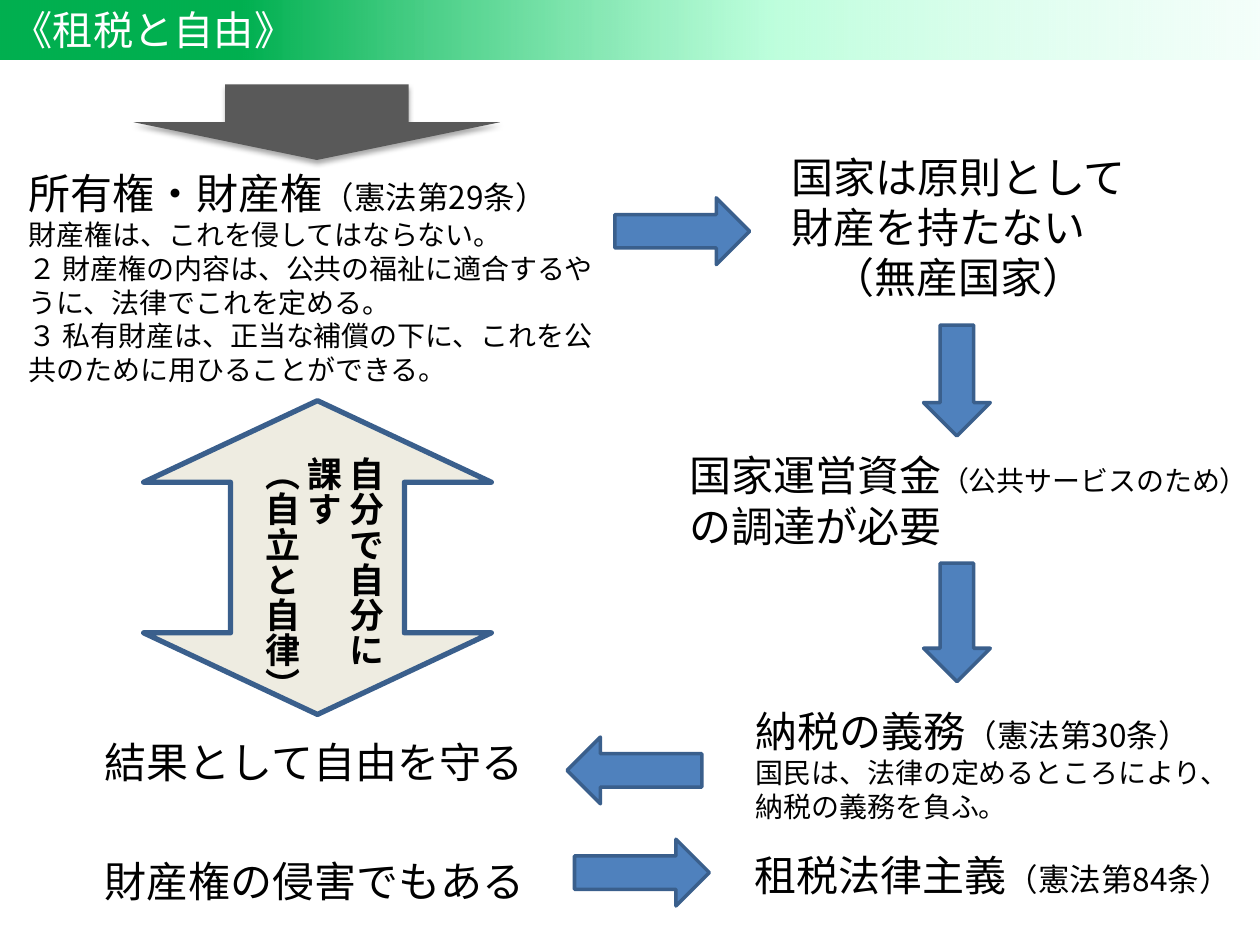
from dataclasses import dataclass

from lxml.etree import SubElement
from pptx import Presentation
from pptx.dml.color import RGBColor
from pptx.enum.shapes import MSO_SHAPE
from pptx.enum.text import MSO_ANCHOR, MSO_AUTO_SIZE, PP_ALIGN
from pptx.oxml import parse_xml
from pptx.oxml.ns import nsdecls, qn
from pptx.util import Inches, Pt

FONT = "Noto Sans CJK JP"
BLACK = RGBColor(0x00, 0x00, 0x00)
WHITE = RGBColor(0xFF, 0xFF, 0xFF)
BLUE = RGBColor(0x4F, 0x81, 0xBD)
NAVY = RGBColor(0x3A, 0x5F, 0x8C)
GRAY = RGBColor(0x59, 0x59, 0x59)
IVORY = RGBColor(0xEE, 0xEC, 0xE1)
# Title band: position, colour and opacity, in percent
BAND_STOPS = ((19, RGBColor(0x00, 0xB0, 0x50), 100),
              (61, RGBColor(0xAB, 0xFF, 0xD3), 78),
              (100, RGBColor(0xDB, 0xFF, 0xF0), 28))

# The slide is a grid of 100 columns by 75 rows
COLUMNS, ROWS = 100, 75
SLIDE_W, SLIDE_H = Inches(10), Inches(7.5)
HEAD, ARTICLE, BODY, MOTTO = 24, 18, 16, 20


@dataclass(frozen=True)
class Area:
    col: float
    row: float
    cols: float
    rows: float

    def emu(self) -> tuple[int, int, int, int]:
        return (round(self.col * SLIDE_W / COLUMNS), round(self.row * SLIDE_H / ROWS),
                round(self.cols * SLIDE_W / COLUMNS), round(self.rows * SLIDE_H / ROWS))


@dataclass(frozen=True)
class Line:
    """One paragraph: (text, size) pieces."""
    pieces: tuple[tuple[str, int], ...]
    align: PP_ALIGN = PP_ALIGN.LEFT


@dataclass(frozen=True)
class Statement:
    area: Area
    lines: tuple[Line, ...]
    wrap: bool = False


@dataclass(frozen=True)
class Step:
    """A flow arrow: its centre, length and direction."""
    col: float
    row: float
    length: float
    rotation: int = 0


ARROW_WIDTH = 5.3
DOWN, LEFT, RIGHT = 0, 90, 270

STATEMENTS = (
    Statement(Area(1.3, 12.8, 47.8, 18.5), (
        Line((("所有権・財産権", HEAD), ("（憲法第29条）", ARTICLE))),
        Line((("財産権は、これを侵してはならない。", BODY),)),
        Line((("２ 財産権の内容は、公共の福祉に適合するやうに、法律でこれを定める。", BODY),)),
        Line((("３ 私有財産は、正当な補償の下に、これを公共のために用ひることができる。", BODY),)),
    ), wrap=True),
    Statement(Area(61.8, 11.5, 28.9, 13.1), (
        Line((("国家は原則として", HEAD),)),
        Line((("財産を持たない", HEAD),)),
        Line((("（無産国家）", HEAD),), PP_ALIGN.CENTER),
    )),
    Statement(Area(53.7, 35.2, 46.9, 9.1), (
        Line((("国家運営資金", HEAD), ("（公共サービスのため）", BODY))),
        Line((("の調達が必要", HEAD),)),
    )),
    Statement(Area(59, 55.5, 41, 10.4), (
        Line((("納税の義務", HEAD), ("（憲法第30条）", ARTICLE))),
        Line((("国民は、法律の定めるところにより、納税の義務を負ふ。", BODY),)),
    ), wrap=True),
    Statement(Area(7.3, 58, 35.7, 5), (Line((("結果として自由を守る", HEAD),)),)),
    Statement(Area(7.3, 67.4, 35.7, 5), (Line((("財産権の侵害でもある", HEAD),)),)),
    Statement(Area(58.9, 66.9, 41.1, 5), (
        Line((("租税法律主義", HEAD), ("（憲法第84条）", ARTICLE))),)),
)

STEPS = (
    Step(54.15, 18.35, 10.7, RIGHT),
    Step(75.95, 30.2, 8.8, DOWN),
    Step(75.95, 49.4, 9.4, DOWN),
    Step(50.35, 61.15, 10.7, LEFT),
    Step(50.95, 69.25, 10.7, RIGHT),
)


def style_run(run, size: float, color: RGBColor = BLACK, bold: bool = False) -> None:
    run.font.name = FONT
    SubElement(run.font._element, qn("a:ea")).set("typeface", FONT)
    run.font.size = Pt(size)
    run.font.bold = bold
    run.font.color.rgb = color


def add_text(shapes, area: Area, lines: tuple[Line, ...], wrap: bool, bold: bool = False):
    frame = shapes.add_textbox(*area.emu()).text_frame
    frame.word_wrap = wrap
    frame.auto_size = MSO_AUTO_SIZE.SHAPE_TO_FIT_TEXT
    for index, line in enumerate(lines):
        paragraph = frame.add_paragraph() if index else frame.paragraphs[0]
        paragraph.alignment = line.align
        for text, size in line.pieces:
            run = paragraph.add_run()
            run.text = text
            style_run(run, size, bold=bold)
    return frame


def add_arrow(shapes, kind: MSO_SHAPE, area: Area, fill: RGBColor, line_width: float = 0):
    arrow = shapes.add_shape(kind, *area.emu())
    arrow.shadow.inherit = False
    arrow.fill.solid()
    arrow.fill.fore_color.rgb = fill
    if line_width:
        arrow.line.color.rgb = NAVY
        arrow.line.width = Pt(line_width)
    else:
        arrow.line.fill.background()
    return arrow


def set_arrow_proportions(arrow, shaft: float, head: float) -> None:
    """Name both guides directly, as the library's own list for this shape differs."""
    guides = arrow._element.spPr.find(qn("a:prstGeom")).find(qn("a:avLst"))
    for guide in list(guides):
        guides.remove(guide)
    for name, share in (("adj1", shaft), ("adj2", head)):
        guide = SubElement(guides, qn("a:gd"))
        guide.set("name", name)
        guide.set("fmla", f"val {round(share * 100000)}")


def add_step(shapes, step: Step) -> None:
    area = Area(step.col - ARROW_WIDTH / 2, step.row - step.length / 2,
                ARROW_WIDTH, step.length)
    add_arrow(shapes, MSO_SHAPE.DOWN_ARROW, area, BLUE, 2).rotation = step.rotation


def add_drop_shadow(shape) -> None:
    effects = shape._element.spPr.find(qn("a:effectLst"))
    effects.append(parse_xml(
        f'<a:outerShdw {nsdecls("a")} blurRad="{Pt(3.1)}" dist="{Pt(1.8)}" dir="5400000" '
        'rotWithShape="0"><a:srgbClr val="000000"><a:alpha val="35000"/></a:srgbClr>'
        '</a:outerShdw>'))


def format_title(title) -> None:
    title.left, title.top, title.width, title.height = Area(0, 0, 100, 4.7).emu()
    stops = "".join(
        f'<a:gs pos="{place * 1000}"><a:srgbClr val="{color}">'
        f'<a:alpha val="{opacity * 1000}"/></a:srgbClr></a:gs>'
        for place, color, opacity in BAND_STOPS)
    title._element.spPr.append(parse_xml(
        f'<a:gradFill {nsdecls("a")} rotWithShape="1"><a:gsLst>{stops}</a:gsLst>'
        '<a:lin ang="0" scaled="0"/></a:gradFill>'))
    frame = title.text_frame
    frame.text = "《租税と自由》"
    frame.auto_size = MSO_AUTO_SIZE.NONE
    frame.vertical_anchor = MSO_ANCHOR.MIDDLE
    frame.paragraphs[0].alignment = PP_ALIGN.LEFT
    style_run(frame.paragraphs[0].runs[0], 23, WHITE)


def main() -> None:
    deck = Presentation()
    deck.slide_width, deck.slide_height = SLIDE_W, SLIDE_H
    slide = deck.slides.add_slide(deck.slide_layouts[5])
    shapes = slide.shapes
    format_title(shapes.title)

    # Statements and the arrows between them
    for statement in STATEMENTS:
        add_text(shapes, statement.area, statement.lines, statement.wrap)
    for step in STEPS:
        add_step(shapes, step)

    # Arrow leading from the title into the argument
    lead_in = add_arrow(shapes, MSO_SHAPE.DOWN_ARROW, Area(10.6, 6.7, 29.1, 6), GRAY)
    add_drop_shadow(lead_in)

    # Autonomy: two-way arrow with vertical motto
    autonomy = shapes.add_group_shape().shapes
    two_way = add_arrow(autonomy, MSO_SHAPE.UP_DOWN_ARROW,
                        Area(11.4, 31.8, 27.6, 24.9), IVORY, 3)
    set_arrow_proportions(two_way, shaft=0.5, head=0.26)
    motto = tuple(Line(((text, MOTTO),))
                  for text in ("自分で自分に", "課す", "（自立と自律）"))
    motto_frame = add_text(autonomy, Area(19.1, 35.3, 12.1, 22.7), motto, True, bold=True)
    motto_frame._element.find(qn("a:bodyPr")).set("vert", "eaVert")

    deck.save("out.pptx")


if __name__ == "__main__":
    main()
